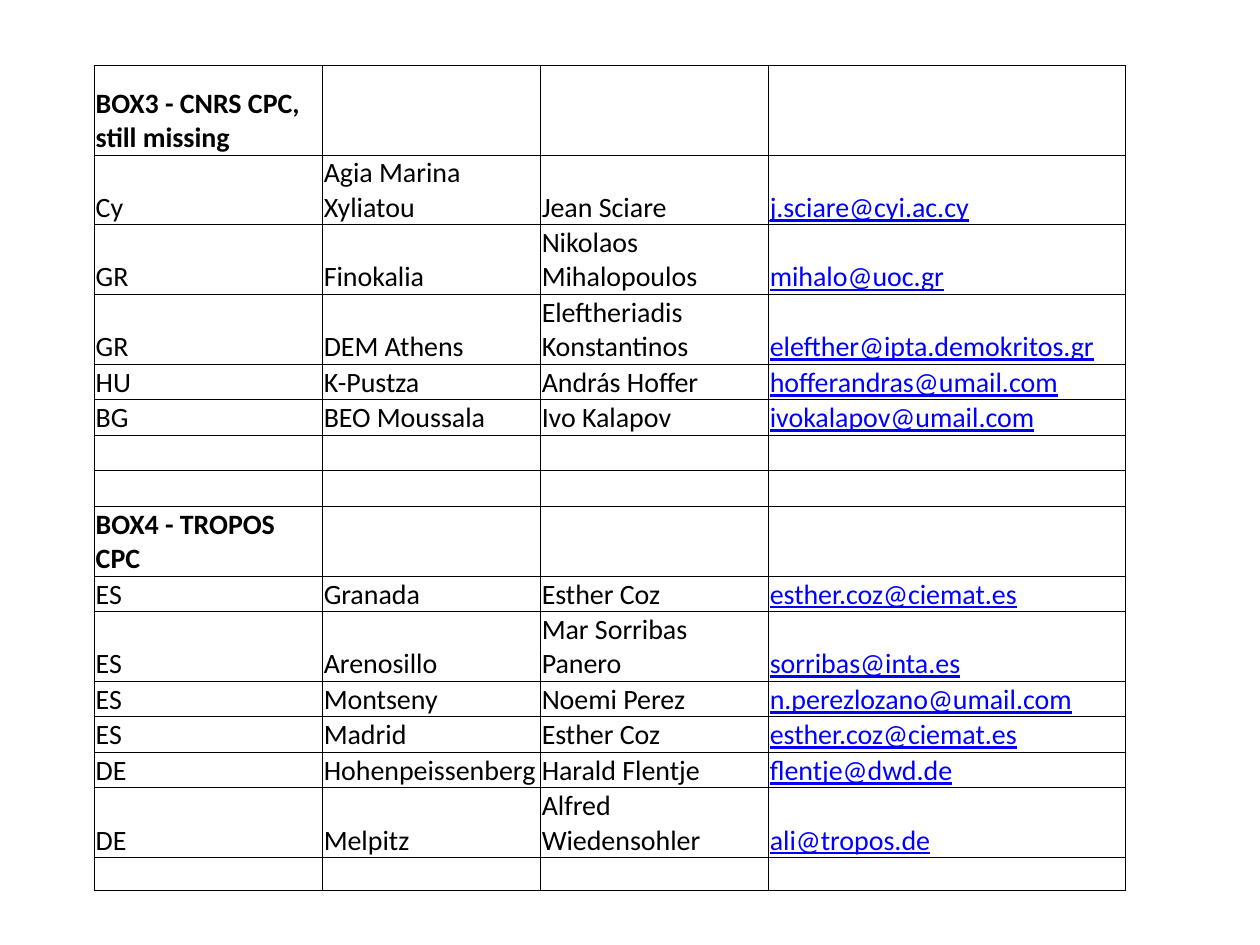
from lxml.etree import SubElement
from pptx import Presentation
from pptx.dml.color import RGBColor
from pptx.enum.text import MSO_ANCHOR
from pptx.oxml.ns import qn
from pptx.util import Inches, Pt

FONT = "Calibri"
BLACK, LINK = "000000", "0000FF"
COL_WIDTHS = [1.81, 1.73, 1.81, 2.83]
ONE_LINE, TWO_LINES, TITLE = 0.26, 0.48, 0.71
EMPTY = (ONE_LINE, "", "", "", "")
ROWS = [
    (TITLE, "BOX3 - CNRS CPC, still missing", "", "", ""),
    (ONE_LINE, "Cy", "Agia Marina Xyliatou", "Jean Sciare", "j.sciare@cyi.ac.cy"),
    (TWO_LINES, "GR", "Finokalia", "Nikolaos Mihalopoulos", "mihalo@uoc.gr"),
    (TWO_LINES, "GR", "DEM Athens", "Eleftheriadis Konstantinos", "elefther@ipta.demokritos.gr"),
    (ONE_LINE, "HU", "K-Pustza", "András Hoffer", "hofferandras@umail.com"),
    (ONE_LINE, "BG", "BEO Moussala", "Ivo Kalapov", "ivokalapov@umail.com"),
    EMPTY,
    EMPTY,
    (TWO_LINES, "BOX4 - TROPOS CPC", "", "", ""),
    (ONE_LINE, "ES", "Granada", "Esther Coz", "esther.coz@ciemat.es"),
    (TWO_LINES, "ES", "Arenosillo", "Mar Sorribas Panero", "sorribas@inta.es"),
    (ONE_LINE, "ES", "Montseny", "Noemi Perez", "n.perezlozano@umail.com"),
    (ONE_LINE, "ES", "Madrid", "Esther Coz", "esther.coz@ciemat.es"),
    (ONE_LINE, "DE", "Hohenpeissenberg", "Harald Flentje", "flentje@dwd.de"),
    (TWO_LINES, "DE", "Melpitz", "Alfred Wiedensohler", "ali@tropos.de"),
    EMPTY,
]


def rgb(color):
    """Turn a hex string into a colour."""
    return RGBColor.from_string(color)


def set_borders(cell, color=BLACK, width=0.5):
    """Draw a thin line on all four sides of a cell."""
    tc_pr = cell._tc.get_or_add_tcPr()
    for side in ("a:lnL", "a:lnR", "a:lnT", "a:lnB"):
        ln = SubElement(tc_pr, qn(side), w=str(Pt(width)))
        fill = SubElement(ln, qn("a:solidFill"))
        SubElement(fill, qn("a:srgbClr"), val=color)


def format_cell(cell):
    """Give a cell its borders, margins, anchor and clear fill."""
    set_borders(cell)
    cell.fill.background()
    cell.vertical_anchor = MSO_ANCHOR.BOTTOM
    cell.margin_left = cell.margin_right = cell.margin_top = Inches(0.01)
    cell.margin_bottom = 0


def write_cell(cell, text, size=16):
    """Write a title, an entry or an address into a cell."""
    p = cell.text_frame.paragraphs[0]
    if not text:
        p._p.get_or_add_endParaRPr().set("sz", str(size * 100))
        return
    p.text = text
    is_link = "@" in text
    for r in p.runs:
        r.font.name = FONT
        r.font.size = Pt(size)
        r.font.bold = text.startswith("BOX")
        r.font.underline = is_link
        r.font.color.rgb = rgb(LINK if is_link else BLACK)


def add_contacts(slide, left, top):
    """Add the table of stations and contacts."""
    height = sum(row[0] for row in ROWS)
    frame = slide.shapes.add_table(
        len(ROWS), len(COL_WIDTHS), Inches(left), Inches(top),
        Inches(sum(COL_WIDTHS)), Inches(height))
    table = frame.table
    table.first_row = table.horz_banding = False
    for column, width in zip(table.columns, COL_WIDTHS):
        column.width = Inches(width)
    for i, (row_height, *texts) in enumerate(ROWS):
        table.rows[i].height = Inches(row_height)
        size = 14 if i == len(ROWS) - 1 else 16
        for j, text in enumerate(texts):
            cell = table.cell(i, j)
            format_cell(cell)
            write_cell(cell, text, size)


def main():
    """Build the slide and save it."""
    prs = Presentation()
    prs.slide_width, prs.slide_height = Inches(10), Inches(7.5)
    slide = prs.slides.add_slide(prs.slide_layouts[6])
    add_contacts(slide, 0.75, 0.52)
    prs.save("out.pptx")


if __name__ == "__main__":
    main()
